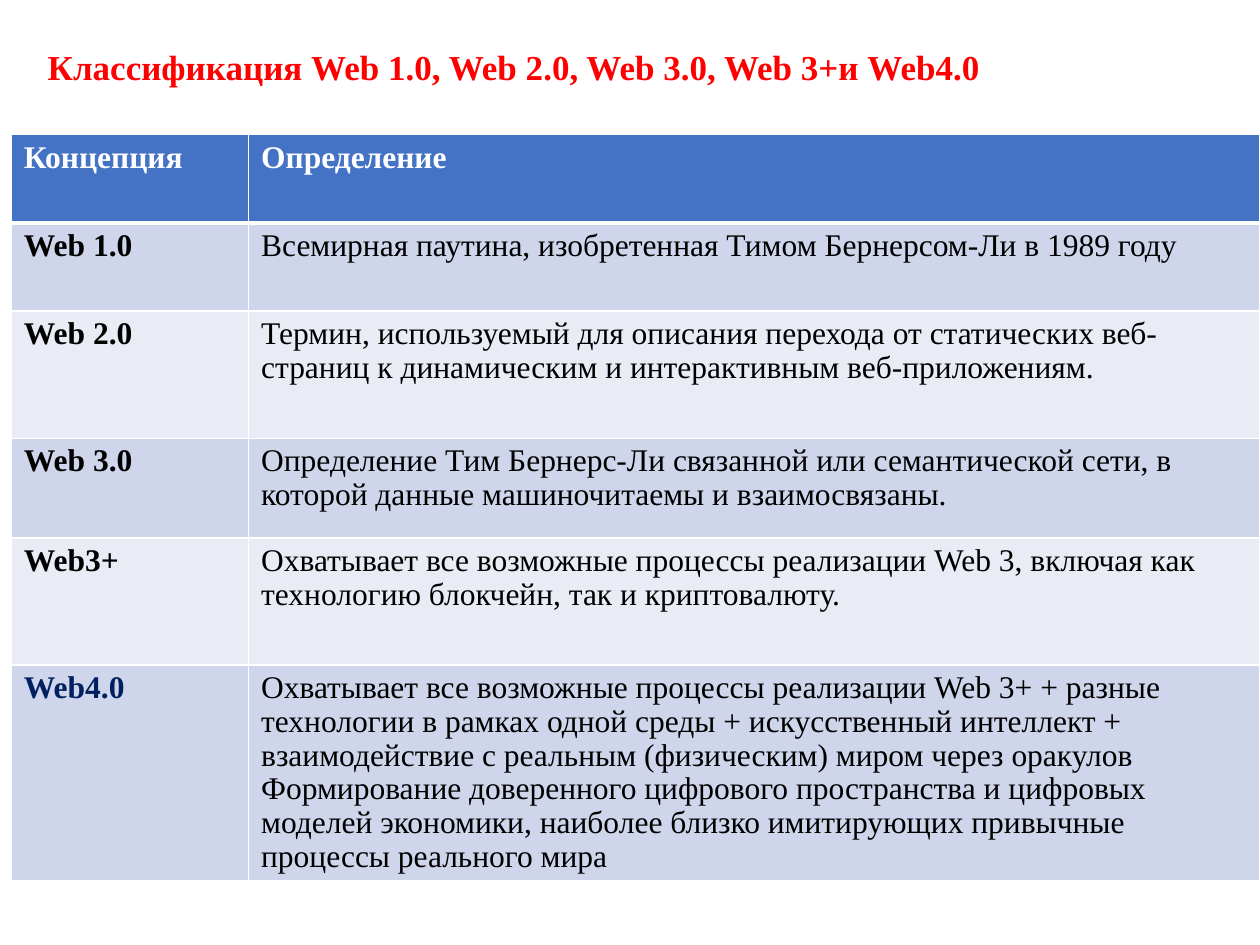
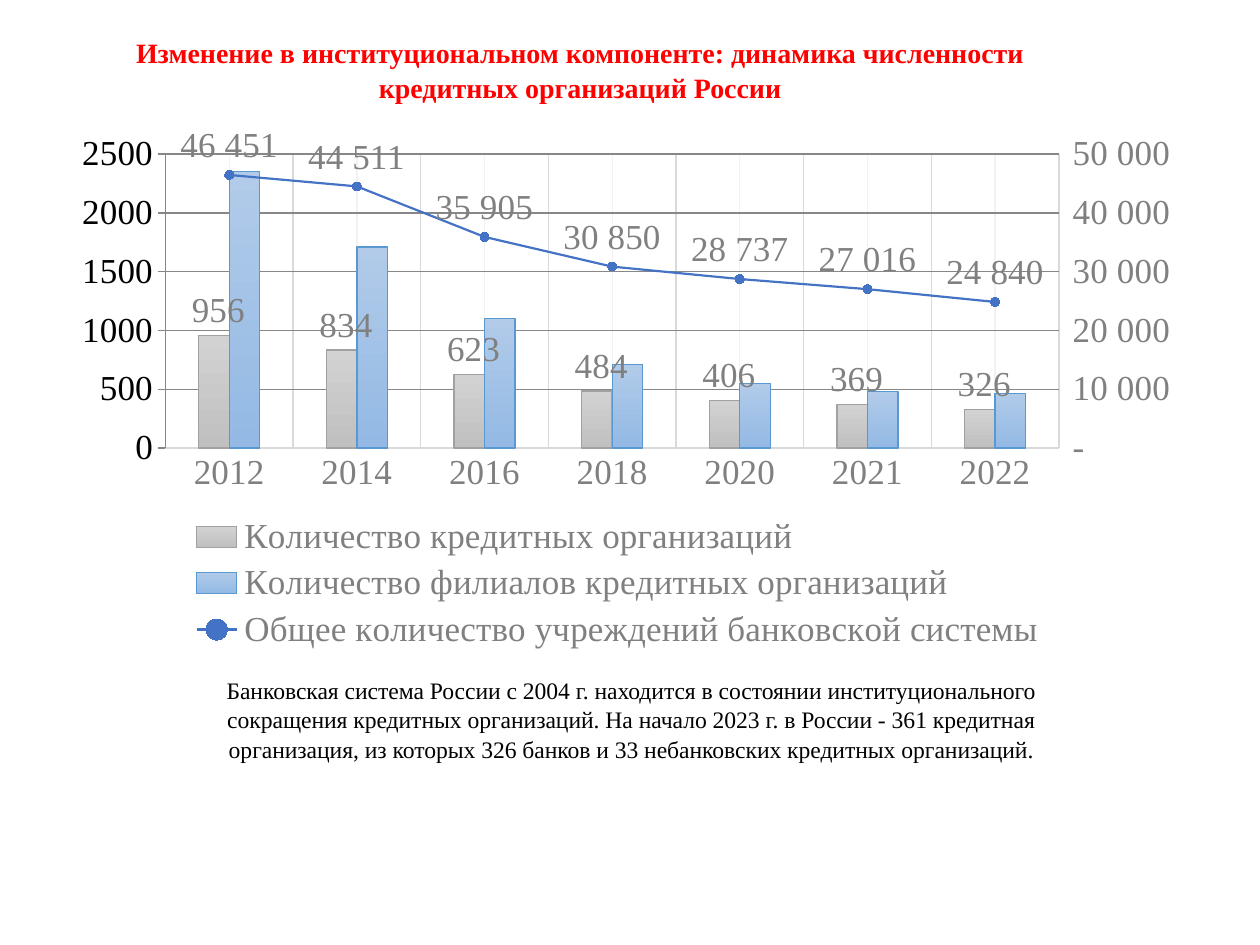
from pptx import Presentation
from pptx.chart.axis import ValueAxis
from pptx.chart.data import CategoryChartData
from pptx.dml.color import RGBColor
from pptx.enum import chart as ch, text as tx
from pptx.oxml import parse_xml
from pptx.util import Pt

FONT = "Times New Roman"
RED = RGBColor(0xFF, 0, 0)
BLACK = RGBColor(0, 0, 0)
WHITE = RGBColor(0xFF, 0xFF, 0xFF)
NAVY = RGBColor(0, 0x20, 0x60)
BLUE = RGBColor(0x44, 0x72, 0xC4)
BANDS = RGBColor(0xE9, 0xEB, 0xF5), RGBColor(0xCF, 0xD5, 0xEA)
GRAY = RGBColor(0x80, 0x80, 0x80)
GRID = RGBColor(0xD9, 0xD9, 0xD9)
FAINT = RGBColor(0xF2, 0xF2, 0xF2)
# Gradient top, gradient bottom, outline of each column series
BARS = [
    (RGBColor(0xD2, 0xD2, 0xD2), RGBColor(0xC0, 0xC0, 0xC0), RGBColor(0xA1, 0xA1, 0xA1)),
    (RGBColor(0xB1, 0xCB, 0xE9), RGBColor(0x93, 0xB9, 0xE4), RGBColor(0x59, 0x98, 0xD0)),
]

NS = ('xmlns:a="http://schemas.openxmlformats.org/drawingml/2006/main" '
      'xmlns:c="http://schemas.openxmlformats.org/drawingml/2006/chart"')
FORMAT = r'_-* #\ ##0_-;\-* #\ ##0_-;_-* "-"??_-;_-'

ROWS = [
    ("Концепция", "Определение"),
    ("Web 1.0", "Всемирная паутина, изобретенная Тимом Бернерсом-Ли в 1989 году"),
    ("Web 2.0", "Термин, используемый для описания перехода от статических веб-страниц "
                "к динамическим и интерактивным веб-приложениям."),
    ("Web 3.0", "Определение Тим Бернерс-Ли связанной или семантической сети, в которой "
                "данные машиночитаемы и взаимосвязаны."),
    ("Web3+", "Охватывает все возможные процессы реализации Web 3, включая как технологию "
              "блокчейн, так и криптовалюту."),
    ("Web4.0", "Охватывает все возможные процессы реализации Web 3+ + разные технологии в "
               "рамках одной среды + искусственный интеллект + взаимодействие с реальным "
               "(физическим) миром через оракулов\n"
               "Формирование доверенного цифрового пространства и цифровых моделей экономики, "
               "наиболее близко имитирующих привычные процессы реального мира"),
]
HEIGHTS = [50.4, 50.4, 72.7, 56.9, 72.7, 112.3]
SHARE = 0.19  # part of the table width taken by the first column

YEARS = ["2012", "2014", "2016", "2018", "2020", "2021", "2022"]
SERIES = {
    "Количество кредитных организаций": [956, 834, 623, 484, 406, 369, 326],
    "Количество филиалов кредитных организаций": [2350, 1710, 1100, 710, 550, 480, 460],
    "Общее количество учреждений банковской системы":
        [46451, 44511, 35905, 30850, 28737, 27016, 24840],
}
NOTE = ("Банковская система России с 2004 г. находится в состоянии институционального "
        "сокращения кредитных организаций. На начало 2023 г. в России - 361 кредитная "
        "организация, из которых 326 банков и 33 небанковских кредитных организаций.")


def style(font, size, color, bold=False):
    font.name, font.size, font.bold = FONT, Pt(size), bold
    font.color.rgb = color


def write(frame, words, size, color, bold=False, align=tx.PP_ALIGN.LEFT, space=1.0):
    frame.text = words
    frame.word_wrap = True
    for para in frame.paragraphs:
        para.alignment, para.line_spacing = align, space
        for run in para.runs:
            style(run.font, size, color, bold)


def place(shape, box):
    shape.left, shape.top, shape.width, shape.height = map(Pt, box)


def add_title(slide, box, words, size, align, anchor, space):
    title = slide.shapes.title
    place(title, box)
    frame = title.text_frame
    write(frame, words, size, RED, True, align, space)
    frame.auto_size = tx.MSO_AUTO_SIZE.NONE
    frame.vertical_anchor = anchor


def add_edges(cell, base):
    """Draw white cell borders, with the bottom one of the given width."""
    props = cell._tc.get_or_add_tcPr()
    for i, (side, width) in enumerate(zip("LRTB", (1, 1, 1, base))):
        props.insert(i, parse_xml(
            f'<a:ln{side} {NS} w="{Pt(width)}"><a:solidFill><a:srgbClr val="{WHITE}"/>'
            f'</a:solidFill></a:ln{side}>'))


def add_grid(slide, box):
    left, top, width, height = map(Pt, box)
    table = slide.shapes.add_table(len(ROWS), 2, left, top, width, height).table
    table.columns[0].width = int(width * SHARE)
    table.columns[1].width = width - int(width * SHARE)
    for r, row in enumerate(ROWS):
        table.rows[r].height = Pt(HEIGHTS[r])
        head, last = r == 0, r == len(ROWS) - 1
        for c, words in enumerate(row):
            cell = table.cell(r, c)
            color = WHITE if head else NAVY if last and c == 0 else BLACK
            write(cell.text_frame, words, 18, color, head or c == 0, space=0.97)
            cell.fill.solid()
            cell.fill.fore_color.rgb = BLUE if head else BANDS[r % 2]
            add_edges(cell, 3 if head else 1)


def add_line(chart):
    """Move the last series to a line plot on a right-hand axis."""
    area = chart._chartSpace.chart.plotArea
    bars = area.find("{*}barChart")
    line = parse_xml(
        f'<c:lineChart {NS}><c:grouping val="standard"/><c:varyColors val="0"/>'
        '<c:marker val="1"/><c:axId val="501"/><c:axId val="502"/></c:lineChart>')
    ser = bars.findall("{*}ser")[-1]
    for flag in ser.findall("{*}invertIfNegative"):
        ser.remove(flag)
    line.insert(2, ser)
    bars.addnext(line)
    cats = parse_xml(
        f'<c:catAx {NS}><c:axId val="501"/><c:scaling/><c:delete val="1"/>'
        '<c:axPos val="b"/><c:crossAx val="502"/></c:catAx>')
    vals = parse_xml(
        f'<c:valAx {NS}><c:axId val="502"/><c:scaling/><c:delete val="0"/>'
        '<c:axPos val="r"/><c:crossAx val="501"/><c:crosses val="max"/></c:valAx>')
    area.find("{*}valAx").addnext(cats)
    cats.addnext(vals)
    return ValueAxis(vals)


def set_plot(chart, x, y, w, h):
    """Fix the inner plot area, in parts of the chart size."""
    area = chart._chartSpace.chart.plotArea
    for old in area.findall("{*}layout"):
        area.remove(old)
    area.insert(0, parse_xml(
        f'<c:layout {NS}><c:manualLayout><c:layoutTarget val="inner"/>'
        '<c:xMode val="edge"/><c:yMode val="edge"/>'
        f'<c:x val="{x}"/><c:y val="{y}"/><c:w val="{w}"/><c:h val="{h}"/>'
        '</c:manualLayout></c:layout>'))


def set_line(line, color, width=0.75):
    line.color.rgb = color
    line.width = Pt(width)


def set_axis(axis):
    axis.major_tick_mark = axis.minor_tick_mark = ch.XL_TICK_MARK.NONE
    style(axis.tick_labels.font, 20, GRAY)


def set_scale(axis, top, step):
    set_axis(axis)
    axis.minimum_scale, axis.maximum_scale, axis.major_unit = 0, top, step
    axis.tick_labels.number_format = FORMAT
    axis.tick_labels.number_format_is_linked = False
    axis.format.line.fill.background()
    set_line(axis.major_gridlines.format.line, GRID)


def add_minor(chart):
    """Add faint lines through the middle of each category."""
    chart.category_axis.has_minor_gridlines = True
    area = chart._chartSpace.chart.plotArea
    area.find("{*}catAx/{*}minorGridlines").append(parse_xml(
        f'<c:spPr {NS}><a:ln w="{Pt(0.75)}"><a:solidFill><a:srgbClr val="{FAINT}"/>'
        '</a:solidFill></a:ln></c:spPr>'))


def add_labels(ser, spot):
    labels = ser.data_labels
    labels.show_value = True
    labels.position = spot
    labels.number_format = FORMAT
    labels.number_format_is_linked = False
    style(labels.font, 20, GRAY)


def add_chart(slide, box):
    data = CategoryChartData()
    data.categories = YEARS
    for name, values in SERIES.items():
        data.add_series(name, values)
    chart = slide.shapes.add_chart(
        ch.XL_CHART_TYPE.COLUMN_CLUSTERED, *map(Pt, box), data).chart
    chart.has_title = False
    style(chart.font, 20, BLACK)
    right = add_line(chart)
    set_plot(chart, 0.11, 0.06, 0.77, 0.55)

    chart.has_legend = True
    chart.legend.position = ch.XL_LEGEND_POSITION.BOTTOM
    chart.legend.include_in_layout = False
    style(chart.legend.font, 20, GRAY)

    cats = chart.category_axis
    set_axis(cats)
    set_line(cats.format.line, GRID)
    set_line(cats.major_gridlines.format.line, GRID)
    add_minor(chart)
    set_scale(chart.value_axis, 2500, 500)
    set_scale(right, 50000, 10000)

    bars, trend = chart.plots
    bars.gap_width, bars.overlap, bars.vary_by_categories = 219, 0, False
    for ser, (light, dark, edge) in zip(bars.series, BARS):
        fill = ser.format.fill
        fill.gradient()
        fill.gradient_angle = 270
        for stop, color, spot in zip(fill.gradient_stops, (light, dark), (0, 1)):
            stop.color.rgb, stop.position = color, spot
        set_line(ser.format.line, edge)
    add_labels(bars.series[0], ch.XL_LABEL_POSITION.OUTSIDE_END)

    total = trend.series[0]
    total.smooth = False
    set_line(total.format.line, BLUE, 1.25)
    total.marker.style, total.marker.size = ch.XL_MARKER_STYLE.CIRCLE, 5
    total.marker.format.fill.solid()
    total.marker.format.fill.fore_color.rgb = BLUE
    set_line(total.marker.format.line, BLUE)
    add_labels(total, ch.XL_LABEL_POSITION.ABOVE)


def add_note(slide, box):
    note = slide.shapes.add_textbox(*map(Pt, box))
    write(note.text_frame, NOTE, 13.5, BLACK, align=tx.PP_ALIGN.CENTER, space=1.05)


def web_slide(slide):
    add_title(slide, (20, 8, 576, 62.6),
              "Классификация Web 1.0, Web 2.0, Web 3.0, Web 3+и Web4.0",
              20, tx.PP_ALIGN.LEFT, tx.MSO_ANCHOR.MIDDLE, 0.9)
    add_grid(slide, (6.5, 77, 713.5, sum(HEIGHTS)))


def bank_slide(slide):
    add_title(slide, (37.4, 15.8, 588.2, 44),
              "Изменение в институциональном компоненте: динамика численности "
              "кредитных организаций России",
              16, tx.PP_ALIGN.CENTER, tx.MSO_ANCHOR.TOP, 1.05)
    add_note(slide, (95, 381.6, 531.4, 56.2))
    add_chart(slide, (21.6, 69.8, 663.1, 305.3))


def main():
    deck = Presentation()
    deck.slide_width, deck.slide_height = Pt(720), Pt(540)
    for build in (web_slide, bank_slide):
        build(deck.slides.add_slide(deck.slide_layouts[5]))
    deck.save("out.pptx")


if __name__ == "__main__":
    main()
